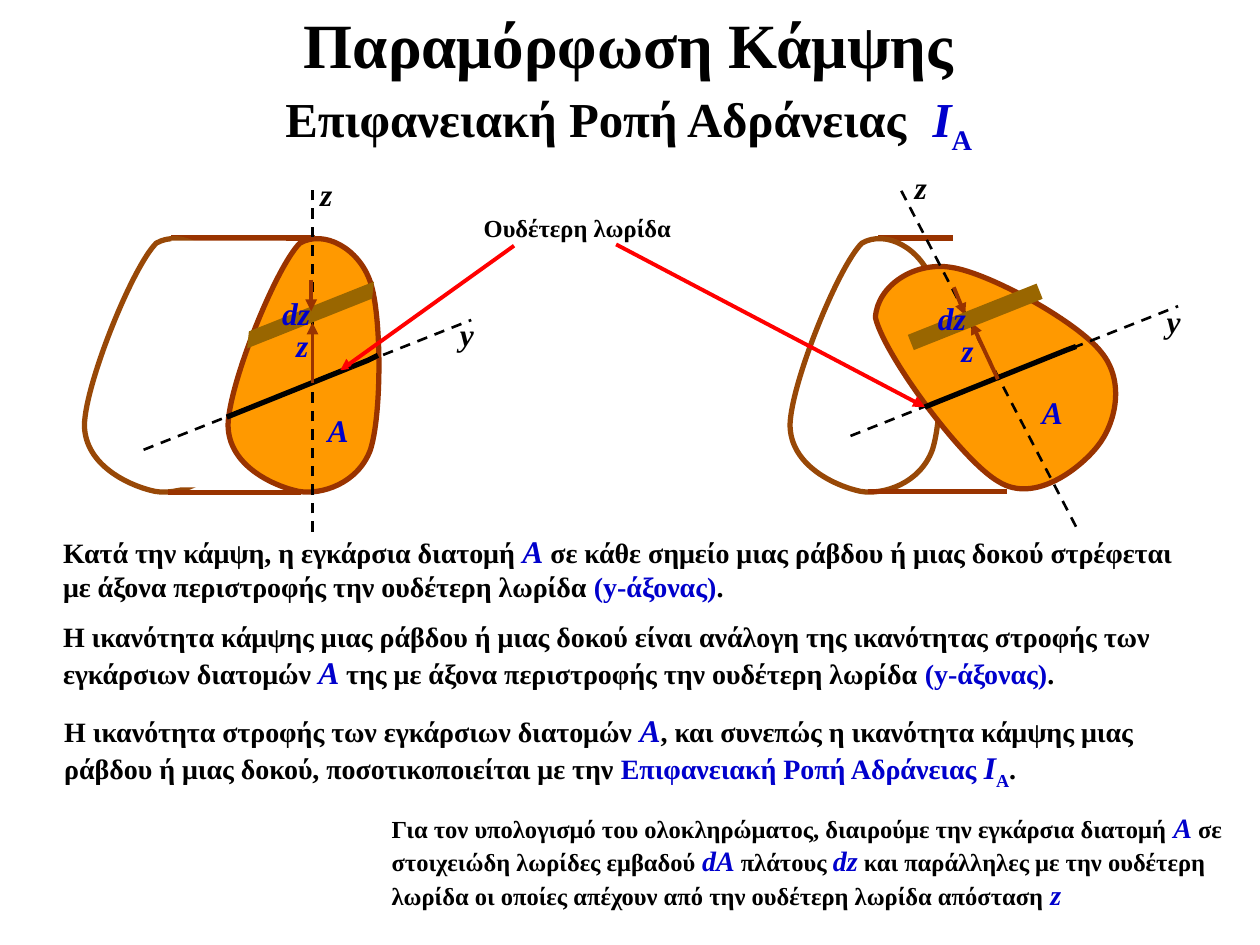
from typing import NamedTuple

from lxml.etree import SubElement
from pptx import Presentation
from pptx.dml.color import RGBColor
from pptx.enum.dml import MSO_LINE
from pptx.enum.shapes import MSO_CONNECTOR, MSO_SHAPE
from pptx.enum.text import MSO_ANCHOR, MSO_AUTO_SIZE, PP_ALIGN
from pptx.oxml.ns import qn
from pptx.util import Pt

PX = 9144
BLACK = RGBColor(0x00, 0x00, 0x00)
WHITE = RGBColor(0xFF, 0xFF, 0xFF)
BLUE = RGBColor(0x00, 0x00, 0xCC)
RED = RGBColor(0xFF, 0x00, 0x00)
RUST = RGBColor(0x99, 0x33, 0x00)
BROWN = RGBColor(0x98, 0x48, 0x07)
ORANGE = RGBColor(0xFF, 0x99, 0x00)
OCHRE = RGBColor(0x99, 0x66, 0x00)


class Run(NamedTuple):
    text: str
    size: float
    color: RGBColor = BLACK
    italic: bool = False
    subscript: bool = False


class Sketch:
    font_name = "Times New Roman"

    def __init__(self, slide):
        self.slide = slide
        self.shapes = slide.shapes

    def line(self, start, end, color, width, dashed=False, arrow=False):
        line = self.shapes.add_connector(
            MSO_CONNECTOR.STRAIGHT, *(v * PX for v in (*start, *end)))
        line.line.color.rgb = color
        line.line.width = Pt(width)
        if dashed:
            line.line.dash_style = MSO_LINE.DASH
        if arrow:
            SubElement(line.line._get_or_add_ln(), qn("a:tailEnd"), type="triangle")
        SubElement(line._element.spPr, qn("a:effectLst"))

    def axis(self, start, end):
        self.line(start, end, BLACK, 1.5, dashed=True)

    def arrow(self, start, end, color=RUST):
        self.line(start, end, color, 2.25, arrow=True)

    def edge(self, start, end):
        self.line(start, end, RUST, 3)

    def outline(self, points, color, fill=None, closed=True, rotation=0):
        builder = self.shapes.build_freeform(*points[0], scale=PX)
        builder.add_line_segments(points[1:], close=closed)
        shape = builder.convert_to_shape()
        if closed:
            self.bend(shape)
        self.paint(shape, fill)
        shape.line.color.rgb = color
        shape.line.width = Pt(3)
        shape.rotation = rotation

    def bend(self, shape):
        segments = list(shape._element.iter(qn("a:lnTo")))
        for first, second, third in zip(*[iter(segments)] * 3):
            first.tag = qn("a:cubicBezTo")
            for segment in (second, third):
                first.append(segment[0])
                segment.getparent().remove(segment)

    def paint(self, shape, fill):
        shape.shadow.inherit = False
        if fill is None:
            shape.fill.background()
        else:
            shape.fill.solid()
            shape.fill.fore_color.rgb = fill

    def block(self, kind, box, fill, rotation=0, slant=None):
        shape = self.shapes.add_shape(kind, *(v * PX for v in box))
        self.paint(shape, fill)
        shape.line.fill.background()
        shape.rotation = rotation
        if slant is not None:
            shape.adjustments[0] = slant

    def text(self, box, runs, align=PP_ALIGN.LEFT, inset=False, wrap=True,
             anchor=MSO_ANCHOR.TOP, after=0, grow=False):
        frame = self.shapes.add_textbox(*(v * PX for v in box)).text_frame
        frame.word_wrap = wrap
        frame.vertical_anchor = anchor
        if grow:
            frame.auto_size = MSO_AUTO_SIZE.SHAPE_TO_FIT_TEXT
        if not inset:
            frame.margin_left = frame.margin_right = 0
            frame.margin_top = frame.margin_bottom = 0
        paragraph = frame.paragraphs[0]
        paragraph.alignment = align
        paragraph.space_after = Pt(after)
        paragraph.font.name = self.font_name
        paragraph.font.bold = True
        for part in runs:
            if part.text == "\n":
                paragraph.add_line_break()
                continue
            run = paragraph.add_run()
            run.text = part.text
            run.font.size = Pt(part.size)
            run.font.color.rgb = part.color
            run.font.italic = part.italic
            if part.subscript:
                run.font._element.set("baseline", "-25000")

    def label(self, text, left, top, color=BLACK, width=20, align=PP_ALIGN.LEFT):
        self.text((left, top, width, 27), [Run(text, 18, color, True)], align, after=8)


def symbol(text, size):
    return Run(text, size, BLUE, True)


SECTION = [(684, 193), (665, 212), (628, 304), (627, 337), (627, 370), (664, 386),
           (683, 390), (701, 393), (730, 384), (740, 357), (749, 329), (749, 251),
           (740, 224), (731, 197), (703, 182), (684, 193)]
TURNED_SECTION = [(728, 206), (719, 234), (730, 339), (747, 368), (763, 398), (809, 391),
                  (829, 383), (850, 375), (874, 350), (869, 320), (865, 290), (824, 221),
                  (800, 202), (777, 183), (742, 185), (728, 206)]


def shifted(points, dx):
    return [(x + dx, y) for x, y in points]


def draw_turned_beam(sketch):
    sketch.label("y", 926, 240)
    sketch.edge((697, 189), (756, 189))
    sketch.outline(SECTION, BROWN)
    sketch.edge((689, 390), (799, 390))
    sketch.outline(TURNED_SECTION, RUST, ORANGE, rotation=329.8)
    sketch.outline([(734, 323), (846, 278), (854, 275)], BLACK, closed=False)
    sketch.axis((675, 346), (935, 243))
    sketch.axis((854, 418), (713, 147))
    sketch.label("z", 726, 133)
    sketch.arrow((489, 194), (734, 323), RED)
    sketch.label("Α", 827, 312, BLUE)


def draw_straight_beam(sketch):
    sketch.edge((136, 189), (250, 189))
    sketch.outline(shifted(SECTION, -560), BROWN)
    sketch.block(MSO_SHAPE.RECTANGLE, (136, 191, 91, 196), WHITE)
    sketch.edge((133, 391), (239, 391))
    sketch.outline(shifted(SECTION, -446), RUST, ORANGE)
    sketch.outline([(180, 331), (292, 286), (300, 282)], BLACK, closed=False)
    sketch.label("Α", 260, 326, BLUE)
    sketch.arrow((408, 195), (270, 294), RED)
    sketch.text((374, 164, 175, 34), [Run("Ουδέτερη λωρίδα", 14)],
                inset=True, wrap=False, grow=True)


def write_paragraphs(sketch):
    sketch.text((50, 5, 898, 118), [
        Run("Παραμόρφωση Κάμψης", 36), Run("\n", 36),
        Run("Επιφανειακή Ροπή Αδράνειας ", 27.9), Run(" ", 32.4, italic=True),
        symbol("Ι", 27.9), Run("A", 27.9, BLUE, subscript=True),
    ], PP_ALIGN.CENTER, inset=True, anchor=MSO_ANCHOR.MIDDLE)
    y_axis = [Run("(y-άξονας)", 16, BLUE), Run(".", 16)]
    statements = [
        (50, 422, [
            Run("Κατά την κάμψη, η εγκάρσια διατομή ", 16), symbol("A", 18),
            Run(" σε κάθε σημείο μιας ράβδου ή μιας δοκού στρέφεται "
                "με άξονα περιστροφής την ουδέτερη λωρίδα ", 16), *y_axis]),
        (50, 492, [
            Run("Η ικανότητα κάμψης μιας ράβδου ή μιας δοκού είναι ανάλογη "
                "της ικανότητας στροφής των εγκάρσιων διατομών ", 16), symbol("A", 18),
            Run(" της με άξονα περιστροφής την ουδέτερη λωρίδα ", 16), *y_axis]),
        (51, 564, [
            Run("Η ικανότητα στροφής των εγκάρσιων διατομών ", 16), symbol("A", 18),
            Run(", και συνεπώς η ικανότητα κάμψης μιας ράβδου ή μιας δοκού, "
                "ποσοτικοποιείται με την ", 16),
            Run("Επιφανειακή Ροπή Αδράνειας ", 16, BLUE), symbol("Ι", 18),
            Run("Α", 18, BLUE, subscript=True), Run(".", 16)]),
    ]
    for left, top, runs in statements:
        sketch.text((left, top, 891, 64), runs, after=8)


def write_integral_note(sketch):
    sketch.text((301, 638, 679, 91), [
        Run("Για τον υπολογισμό του ολοκληρώματος, διαιρούμε την εγκάρσια διατομή ", 14),
        symbol("A", 16), Run(" σε στοιχειώδη λωρίδες εμβαδού ", 14), symbol("dA", 16),
        Run(" πλάτους ", 14), symbol("dz", 16),
        Run(" και παράλληλες με την ουδέτερη λωρίδα οι οποίες απέχουν "
            "από την ουδέτερη λωρίδα απόσταση ", 14), symbol("z", 16),
    ], inset=True, grow=True)


def draw_strips(sketch):
    sketch.label("z", 763, 263, BLUE, 12)
    sketch.arrow((792, 301), (771, 256))
    sketch.arrow((757, 228), (766, 250))
    sketch.block(MSO_SHAPE.PARALLELOGRAM, (719, 245, 110, 13), OCHRE, 338.3, 0)
    sketch.label("dz", 742, 237, BLUE, 27, PP_ALIGN.CENTER)
    sketch.arrow((248, 304), (248, 256))
    sketch.label("z", 235, 259, BLUE, 12)
    sketch.block(MSO_SHAPE.PARALLELOGRAM, (190, 244, 113, 12), OCHRE, 338.3, 0.52)
    sketch.arrow((247, 222), (247, 247))
    sketch.label("dz", 221, 233, BLUE, 28, PP_ALIGN.CENTER)


def main():
    deck = Presentation()
    deck.slide_width, deck.slide_height = 1000 * PX, 750 * PX
    sketch = Sketch(deck.slides.add_slide(deck.slide_layouts[6]))
    draw_turned_beam(sketch)
    draw_straight_beam(sketch)
    write_paragraphs(sketch)
    sketch.axis((248, 422), (248, 147))
    sketch.axis((114, 357), (374, 254))
    sketch.label("y", 365, 250)
    sketch.label("z", 254, 139)
    write_integral_note(sketch)
    draw_strips(sketch)
    deck.save("out.pptx")


if __name__ == "__main__":
    main()
